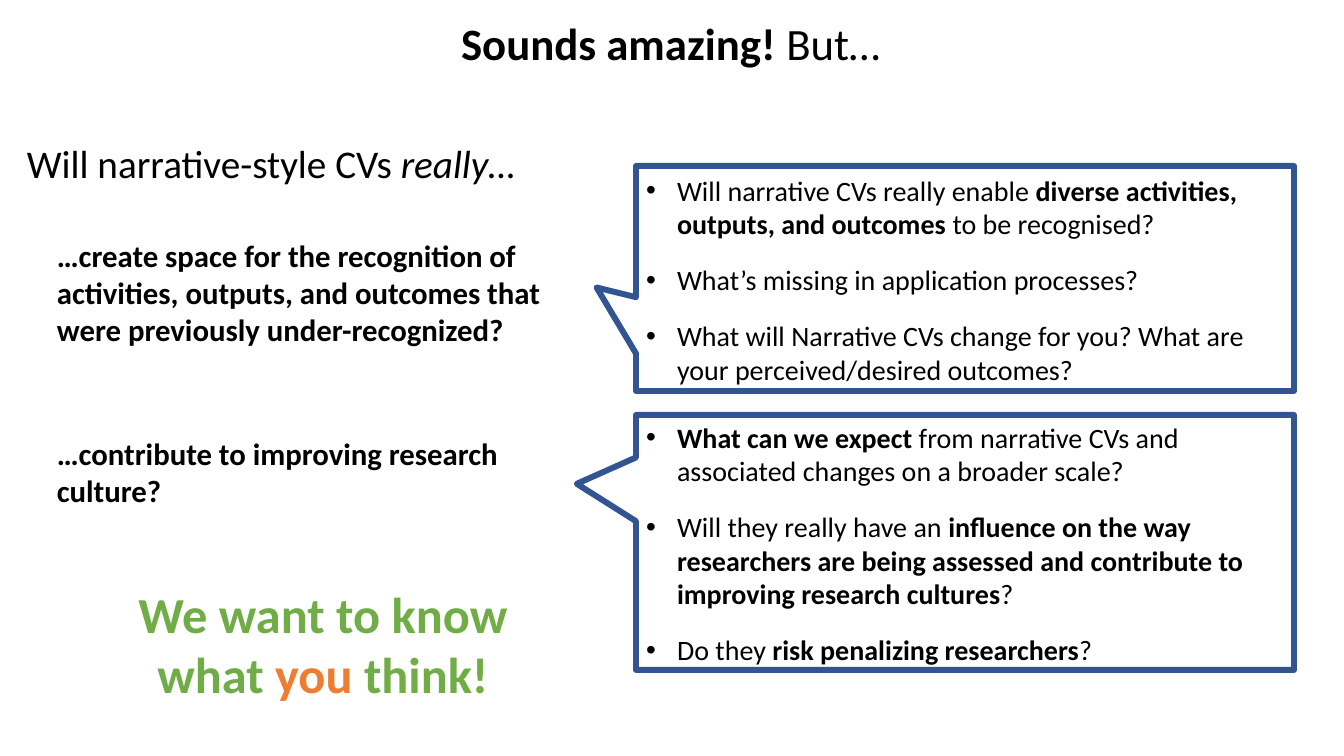
import pptx
import pptx.util
import pptx.dml.color
import pptx.enum.shapes
import pptx.enum.text
import pptx.oxml.ns
import lxml.etree

HUES = {"ink": "000000", "edge": "325491", "green": "70AD47", "gold": "ED7D31"}
PX = 914400 / 100.8
SIZE = (1344, 756)
FACE = "Calibri"
DENT = 31
BOLD = {"bold": True}

TITLE = {"box": (451, 11, 490, 65), "size": 32,
         "text": [[("Sounds amazing!", BOLD), (" But…", {})]]}

NOTES = [
    {"box": (17, 134, 1183, 57), "size": 28,
     "text": [[("Will narrative-style CVs ", {}), ("really…", {"italic": True})]]},
    {"box": (47, 232, 549, 122), "size": 22,
     "text": [[("…create space for the recognition of activities, outputs, and outcomes "
                "that were previously under-recognized?", BOLD)]]},
    {"box": (47, 430, 561, 85), "size": 22,
     "text": [[("…contribute to improving research culture?", BOLD)]]},
    {"box": (96, 578, 454, 132), "size": 36, "align": "CENTER", "hue": "green",
     "text": [[("We want to know what ", BOLD), ("you", {"bold": True, "hue": "gold"}),
               (" think!", BOLD)]]},
]

LISTS = [
    {"box": (636, 168, 661, 225), "size": 20, "gap": 16,
     "text": [
         [("Will narrative CVs really enable ", {}),
          ("diverse activities, outputs, and outcomes ", BOLD),
          ("to be recognised?", {})],
         [("What’s missing in application processes?", {})],
         [("What will Narrative CVs change for you? What are your "
           "perceived/desired outcomes?", {})]]},
    {"box": (636, 415, 645, 260), "size": 20, "gap": 16,
     "text": [
         [("What can we expect ", BOLD),
          ("from narrative CVs and associated changes on a broader scale?", {})],
         [("Will they really have an ", {}),
          ("influence on the way researchers are being assessed and contribute to "
           "improving research cultures", BOLD),
          ("?", {})],
         [("Do they ", {}), ("risk penalizing researchers", BOLD), ("?", {})]]},
]

CALLS = [
    {"box": (636, 166, 658, 225), "tip": (-0.56, 0.04)},
    {"box": (636, 415, 658, 255), "tip": (-0.59, -0.23)},
]


def emu(px):
    return round(px * PX)


def tint(name):
    return pptx.dml.color.RGBColor.from_string(HUES[name])


def put(obj, form):
    for key, val in form.items():
        setattr(obj, key, val)


def place(shape, box):
    put(shape, dict(zip(("left", "top", "width", "height"), map(emu, box))))


def bullet(para):
    props = para._p.get_or_add_pPr()
    props.set("marL", str(emu(DENT)))
    props.set("indent", str(-emu(DENT)))
    for tag, key, val in (("a:buFont", "typeface", "Arial"), ("a:buChar", "char", "•")):
        lxml.etree.SubElement(props, pptx.oxml.ns.qn(tag)).set(key, val)


def write(shape, part):
    place(shape, part["box"])
    frame = shape.text_frame
    put(frame, {"word_wrap": True,
                "auto_size": pptx.enum.text.MSO_AUTO_SIZE.NONE,
                "vertical_anchor": pptx.enum.text.MSO_ANCHOR.TOP})
    for num, runs in enumerate(part["text"]):
        para = frame.add_paragraph() if num else frame.paragraphs[0]
        if "gap" in part:
            bullet(para)
        put(para, {"space_before": pptx.util.Pt(0),
                   "space_after": pptx.util.Pt(part.get("gap", 0)),
                   "alignment": pptx.enum.text.PP_ALIGN[part.get("align", "LEFT")]})
        for text, style in runs:
            run = para.add_run()
            run.text = text
            put(run.font, {"name": FACE, "size": pptx.util.Pt(part["size"]),
                           "bold": style.get("bold", False),
                           "italic": style.get("italic", False)})
            run.font.color.rgb = tint(style.get("hue", part.get("hue", "ink")))


def call(slide, part):
    kind = pptx.enum.shapes.MSO_SHAPE.RECTANGULAR_CALLOUT
    shape = slide.shapes.add_shape(kind, *map(emu, part["box"]))
    for num, val in enumerate(part["tip"]):
        shape.adjustments[num] = val
    shape.shadow.inherit = False
    shape.fill.background()
    shape.line.color.rgb = tint("edge")
    shape.line.width = pptx.util.Pt(4.25)


def main():
    deck = pptx.Presentation()
    put(deck, dict(zip(("slide_width", "slide_height"), map(emu, SIZE))))
    slide = deck.slides.add_slide(deck.slide_layouts.get_by_name("Two Content"))
    write(slide.shapes.title, TITLE)
    for num, part in enumerate(LISTS, 1):
        write(slide.placeholders[num], part)
    for part in NOTES:
        write(slide.shapes.add_textbox(*map(emu, part["box"])), part)
    for part in CALLS:
        call(slide, part)
    deck.save("out.pptx")


if __name__ == "__main__":
    main()
